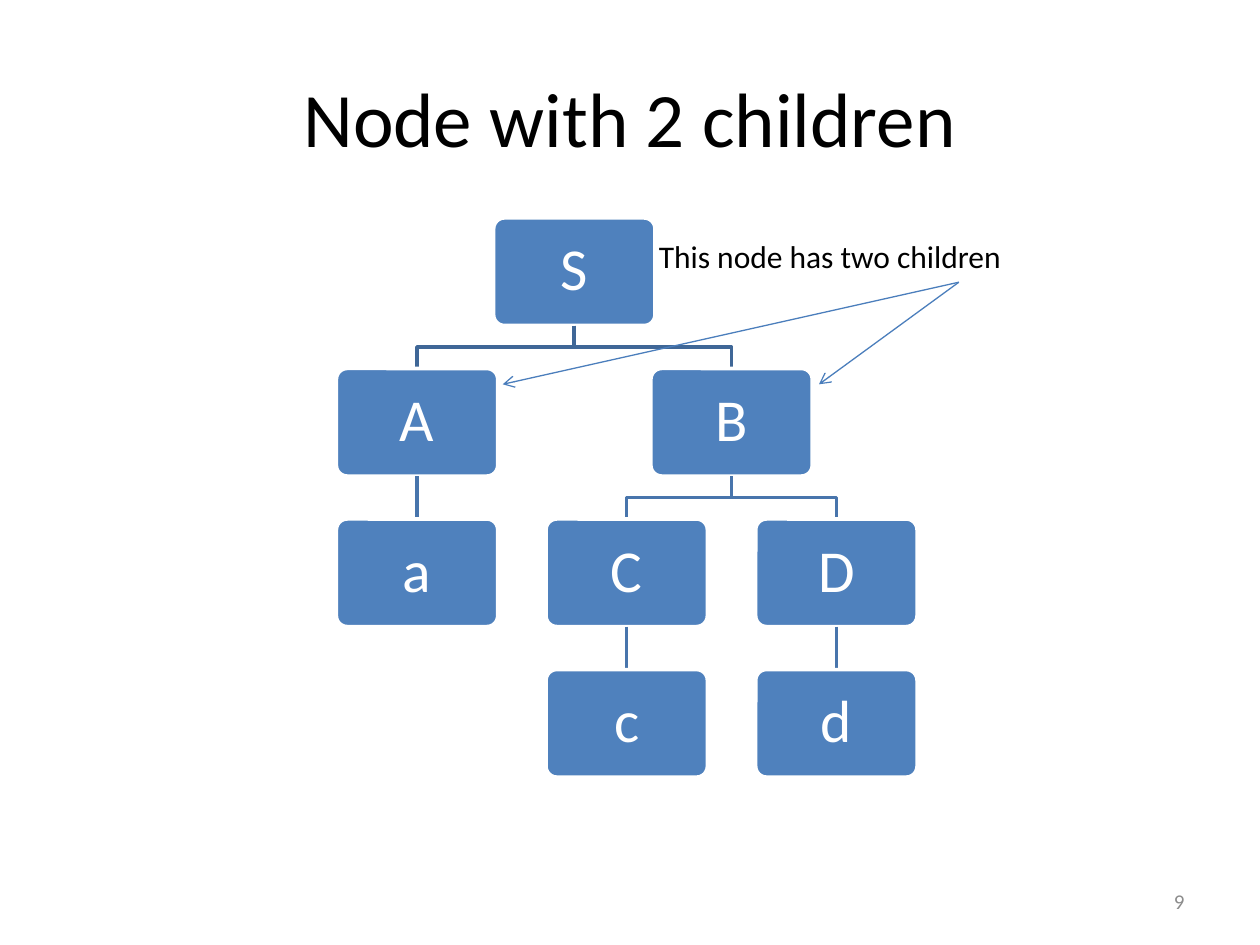
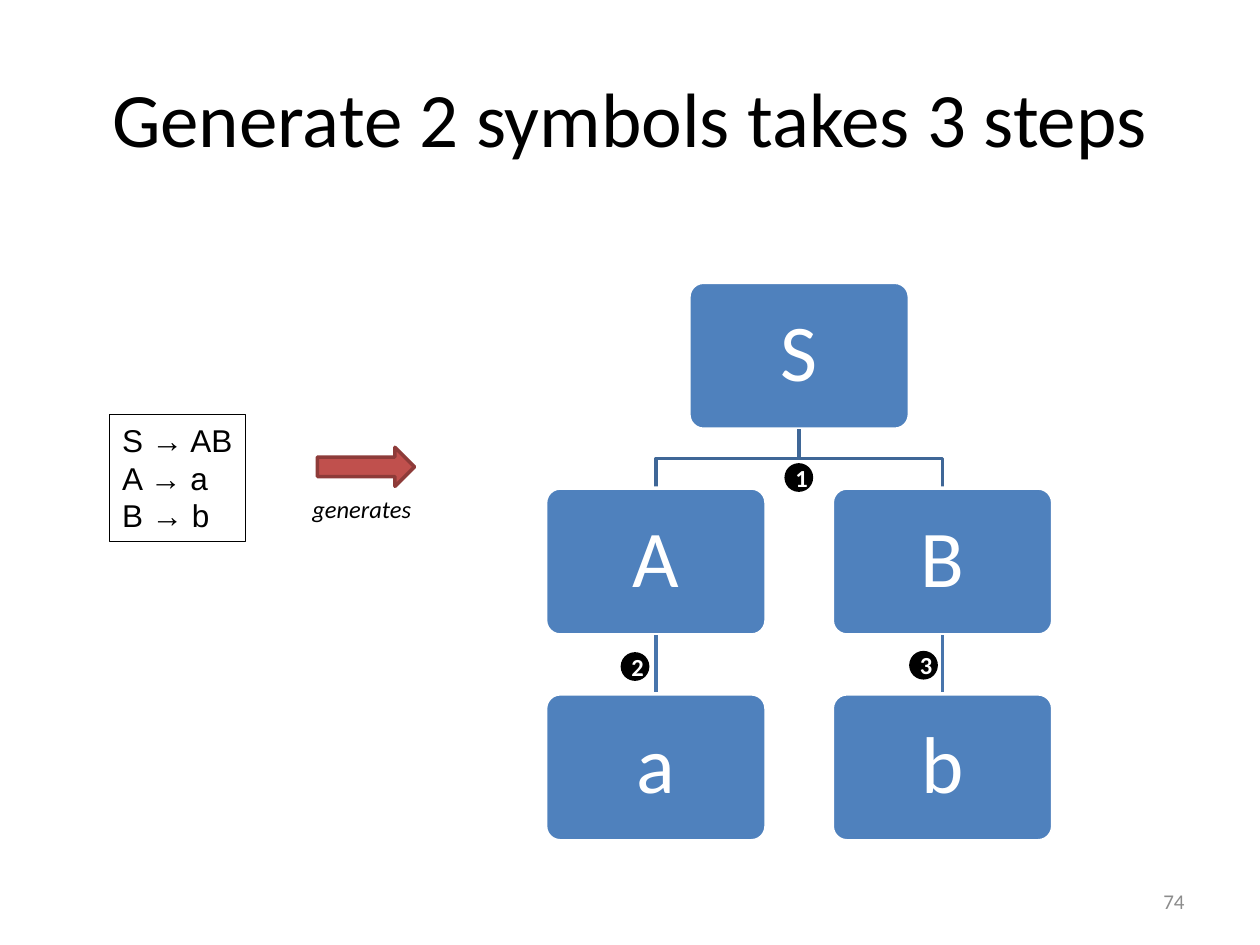
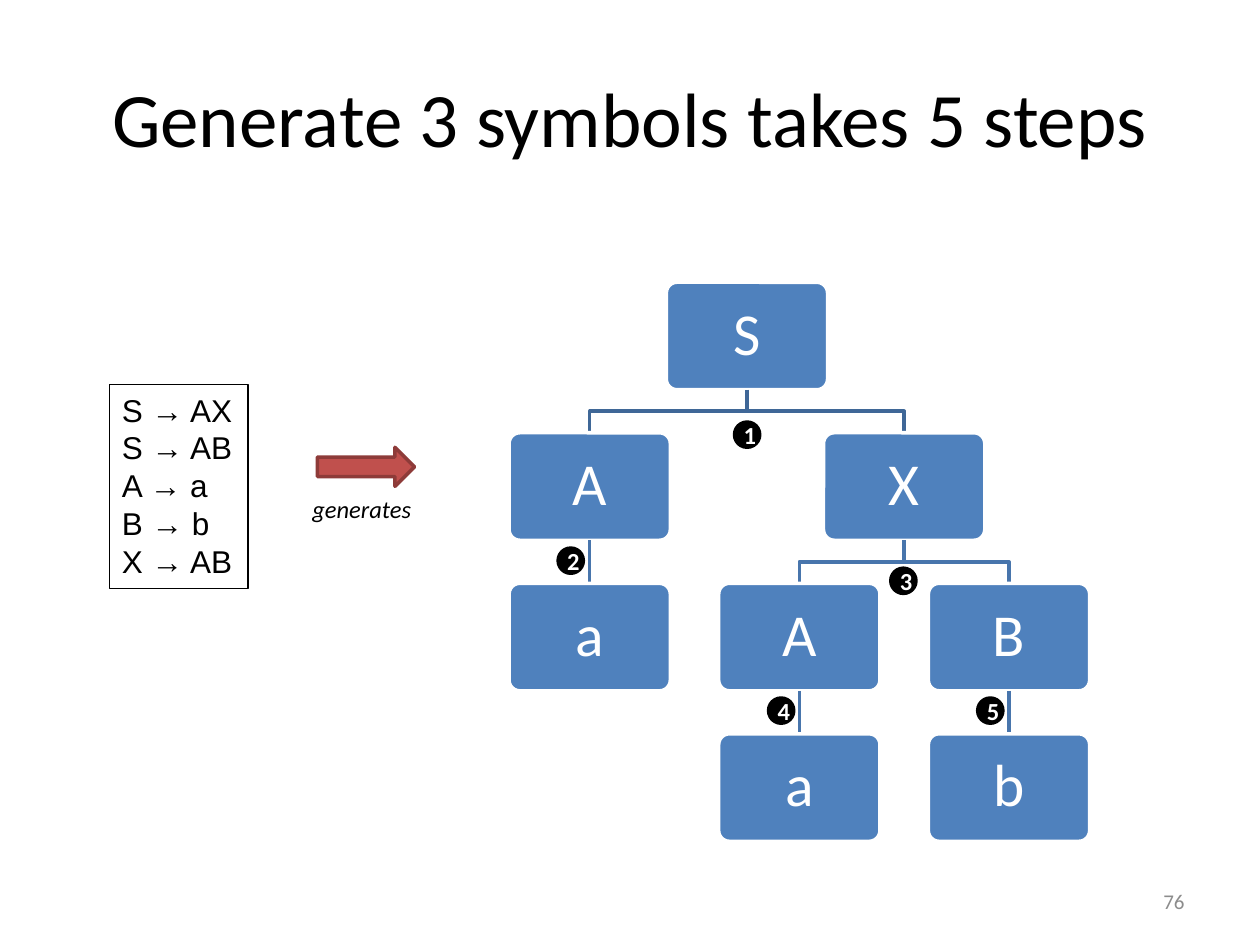
from lxml import etree
from pptx import Presentation
from pptx import util as u
from pptx.dml.color import RGBColor
from pptx.enum import shapes, text
from pptx.oxml.ns import qn

W, H = 10, 7.5
COLORS = {
    "text": "000000", "white": "FFFFFF", "number": "8C8C8C", "node": "4F81BD",
    "root_link": "3F6797", "link": "4875AC", "pointer": "4B7EBC",
    "arrow": "C0504D", "arrow_edge": "8E3B39",
}
BADGE = 0.2

# A tree is (symbol, child, child, ...); steps are the corners of the badges.
SLIDES = [
    {
        "title": "Node with 2 children", "number": "9",
        "tree": ("S", ("A", ("a",)), ("B", ("C", ("c",)), ("D", ("d",)))),
        "left": 2.67, "top": 1.73, "node_width": 1.28, "size": 34,
        "callout": {"text": "This node has two children", "box": (5.13, 1.83, 2.95, 0.4),
                    "start": (7.61, 2.24), "ends": [(3.99, 3.05), (6.5, 3.05)]},
    },
    {
        "title": "Generate 2 symbols takes 3 steps", "number": "74",
        "tree": ("S", ("A", ("a",)), ("B", ("b",))),
        "left": 4.33, "top": 2.24, "node_width": 1.75, "size": 46,
        "rules": ["S → AB", "A → a", "B → b"], "rules_box": (0.87, 3.29, 1.08, 1.01),
        "steps": [(6.24, 3.69), (4.94, 5.19), (7.23, 5.18)],
    },
    {
        "title": "Generate 3 symbols takes 5 steps", "number": "76",
        "tree": ("S", ("A", ("a",)), ("X", ("A", ("a",)), ("B", ("b",)))),
        "left": 4.04, "top": 2.24, "node_width": 1.28, "size": 34,
        "rules": ["S → AX", "S → AB", "A → a", "B → b", "X → AB"],
        "rules_box": (0.87, 3.05, 1.1, 1.62),
        "steps": [(5.83, 3.35), (4.43, 4.35), (7.07, 4.51), (6.1, 5.54), (7.76, 5.54)],
    },
]


def rgb(name):
    return RGBColor.from_string(COLORS[name])


def inches(values):
    return [u.Inches(v) for v in values]


def set_line(sp, color, width):
    sp.line.color.rgb = rgb(color)
    sp.line.width = u.Pt(width)


def write(sp, lines, size, color="text", font="Calibri", align="LEFT", anchor="TOP",
          wrap=True, bold=False, italic=False, spacing=1.0):
    """Fill a shape with lines of text; unwrapped text sets the size of its shape."""
    tf = sp.text_frame
    tf.word_wrap = wrap
    if not wrap:
        tf.auto_size = text.MSO_AUTO_SIZE.SHAPE_TO_FIT_TEXT
    tf.vertical_anchor = getattr(text.MSO_ANCHOR, anchor)
    for i, line in enumerate(lines):
        p = tf.add_paragraph() if i else tf.paragraphs[0]
        p.alignment = getattr(text.PP_ALIGN, align)
        p.line_spacing = spacing
        r = p.add_run()
        r.text = line
        r.font.name, r.font.size = font, u.Pt(size)
        r.font.bold, r.font.italic = bold, italic
        r.font.color.rgb = rgb(color)


def add_text(s, box, lines, size, **style):
    sp = s.shapes.add_textbox(*inches(box))
    write(sp, lines, size, **style)
    return sp


def add_shape(s, kind, box, fill, edge):
    sp = s.shapes.add_shape(getattr(shapes.MSO_SHAPE, kind), *inches(box))
    sp.shadow.inherit = False
    sp.fill.solid()
    sp.fill.fore_color.rgb = rgb(fill)
    set_line(sp, edge, 2)
    return sp


def add_line(s, start, end, color, width, arrow=False):
    sp = s.shapes.add_connector(shapes.MSO_CONNECTOR.STRAIGHT, *inches(start + end))
    set_line(sp, color, width)
    if arrow:
        etree.SubElement(sp.line._get_or_add_ln(), qn("a:tailEnd"), type="arrow")
    etree.SubElement(sp._element.spPr, qn("a:effectLst"))


def add_link(s, start, end, color):
    """Join parent and child, straight if aligned, else with a bend halfway down."""
    if abs(start[0] - end[0]) < 0.01:
        add_line(s, start, end, color, 2)
        return
    middle = (start[1] + end[1]) / 2
    builder = s.shapes.build_freeform(*inches(start), scale=1.0)
    bends = [(start[0], middle), (end[0], middle), end]
    builder.add_line_segments([inches(point) for point in bends], close=False)
    sp = builder.convert_to_shape()
    sp.shadow.inherit = False
    sp.fill.background()
    set_line(sp, color, 2)


def place(tree, first=0):
    """Return (symbol, column, leaf count, children), with parents centred."""
    symbol, *branches = tree
    children, leaves = [], 0
    for branch in branches:
        child = place(branch, first + leaves)
        children.append(child)
        leaves += child[2]
    column = (children[0][1] + children[-1][1]) / 2 if children else first
    return symbol, column, max(leaves, 1), children


def add_tree(s, slide):
    width = slide["node_width"]
    height = width * 2 / 3
    column_step, row_step = width * 1.3, height * 1.4

    def draw(node, depth=0):
        symbol, column, _, children = node
        x, y = slide["left"] + column * column_step, slide["top"] + depth * row_step
        sp = add_shape(s, "ROUNDED_RECTANGLE", (x, y, width, height), "node", "white")
        sp.adjustments[0] = 0.1
        write(sp, [symbol], slide["size"], color="white", align="CENTER",
              anchor="MIDDLE", spacing=0.9)
        for child in children:
            child_x = slide["left"] + child[1] * column_step
            add_link(s, (x + width / 2, y + height), (child_x + width / 2, y + row_step),
                     "link" if depth else "root_link")
            draw(child, depth + 1)

    draw(place(slide["tree"]))


def add_callout(s, callout):
    add_text(s, callout["box"], [callout["text"]], 18, wrap=False)
    for end in callout["ends"]:
        add_line(s, callout["start"], end, "pointer", 0.75, arrow=True)


def add_grammar(s, slide):
    rules = add_text(s, slide["rules_box"], slide["rules"], 18, font="Arial", wrap=False)
    set_line(rules, "text", 0.75)
    add_shape(s, "RIGHT_ARROW", (2.52, 3.55, 0.77, 0.31), "arrow", "arrow_edge")
    add_text(s, (2.38, 3.87, 0.99, 0.34), ["generates"], 14, italic=True, wrap=False)
    for number, corner in enumerate(slide["steps"], 1):
        badge = add_shape(s, "OVAL", corner + (BADGE, BADGE), "text", "text")
        write(badge, [str(number)], 14, color="white", align="CENTER",
              anchor="MIDDLE", bold=True)


def main():
    prs = Presentation()
    prs.slide_width, prs.slide_height = inches((W, H))
    for slide in SLIDES:
        s = prs.slides.add_slide(prs.slide_layouts[6])
        add_text(s, (0.05 * W, 0.04 * H, 0.9 * W, 1.25), [slide["title"]], 44,
                 align="CENTER", anchor="MIDDLE")
        add_text(s, (7.17, 6.95, 2.33, 0.4), [slide["number"]], 12, color="number",
                 align="RIGHT", anchor="MIDDLE")
        add_tree(s, slide)
        if "callout" in slide:
            add_callout(s, slide["callout"])
        if "rules" in slide:
            add_grammar(s, slide)
    prs.save("out.pptx")


if __name__ == "__main__":
    main()
